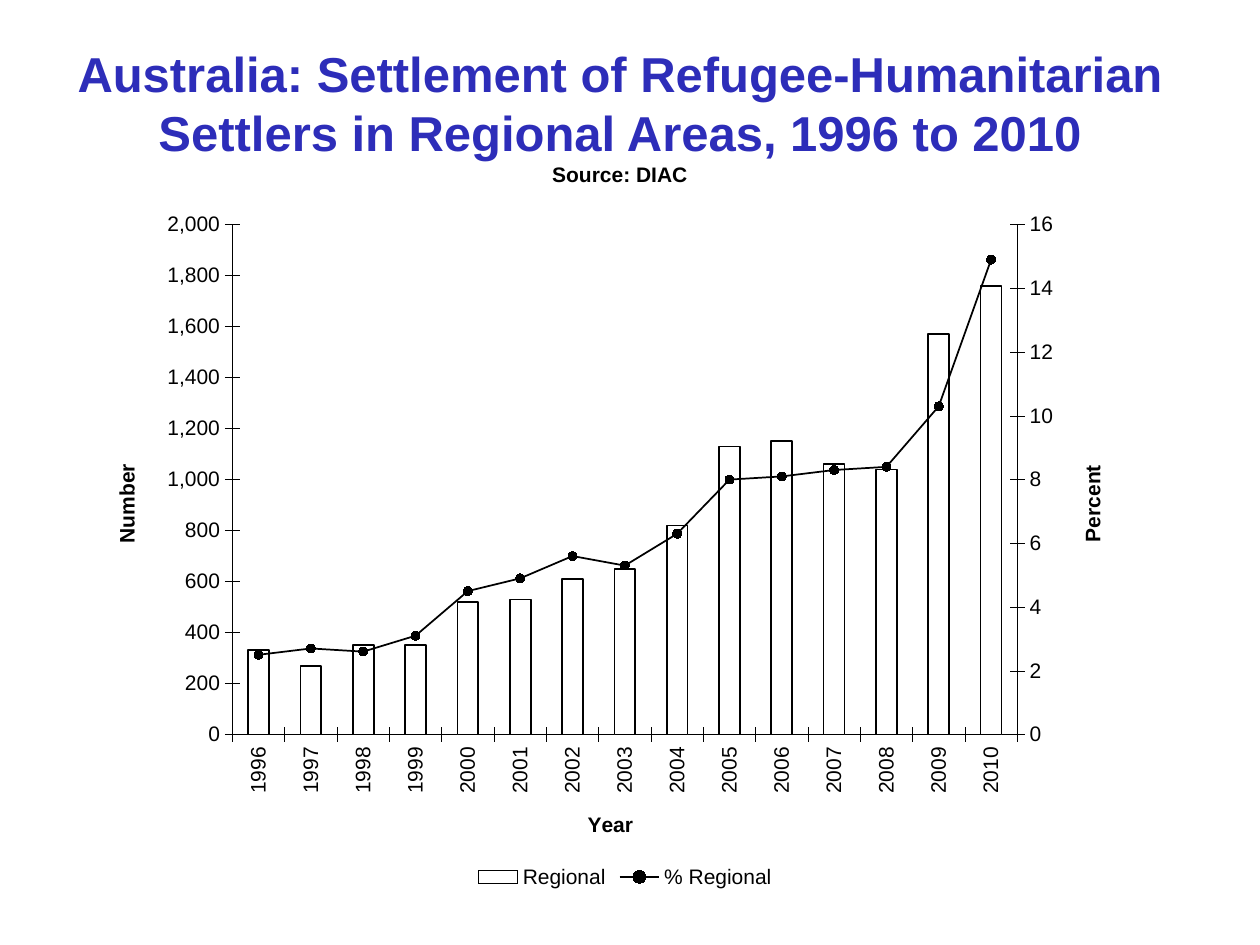
"""Build a slide with a column and line chart of regional settlement."""
from copy import deepcopy
from dataclasses import dataclass

from lxml import etree
from pptx import Presentation
from pptx import util as u
from pptx.chart import axis as ax
from pptx.chart import data as cd
from pptx.dml import color
from pptx.enum import chart as ch
from pptx.enum import text
from pptx.oxml import ns


@dataclass(frozen=True)
class Theme:
    font: str = "Arial"
    heading: color.RGBColor = color.RGBColor(0x2D, 0x2D, 0xB9)
    ink: color.RGBColor = color.RGBColor(0, 0, 0)
    paper: color.RGBColor = color.RGBColor(255, 255, 255)
    title_size: int = 28
    body_size: int = 12
    axis_line: float = 0.25
    series_line: float = 1


class SlideBuilder:
    def __init__(self, prs, theme):
        self.theme = theme
        self.s = prs.slides.add_slide(prs.slide_layouts[5])

    def style_font(self, font, size, rgb, bold=False):
        font.name, font.size, font.bold = self.theme.font, u.Pt(size), bold
        font.color.rgb = rgb

    def style_line(self, line, width):
        line.color.rgb, line.width = self.theme.ink, u.Pt(width)

    def style_fill(self, fill, rgb):
        fill.solid()
        fill.fore_color.rgb = rgb

    def title(self, lines, left, top, width, height):
        sp = self.s.shapes.title
        sp.left, sp.top, sp.width, sp.height = map(u.Pt, (left, top, width, height))
        tf = sp.text_frame
        tf.word_wrap, tf.auto_size = True, text.MSO_AUTO_SIZE.NONE
        tf.vertical_anchor = text.MSO_ANCHOR.MIDDLE
        tf.margin_bottom = u.Pt(18)
        for i, (words, size, rgb) in enumerate(lines):
            p = tf.add_paragraph() if i else tf.paragraphs[0]
            p.alignment = text.PP_ALIGN.CENTER
            r = p.add_run()
            r.text = words
            self.style_font(r.font, size, rgb, bold=True)

    def axis(self, axis, title, turn_title=False, turn_labels=False):
        t = self.theme
        axis.has_major_gridlines = False
        axis.major_tick_mark = ch.XL_TICK_MARK.CROSS
        axis.minor_tick_mark = ch.XL_TICK_MARK.NONE
        self.style_line(axis.format.line, t.axis_line)
        self.style_font(axis.tick_labels.font, t.body_size, t.ink)
        tf = axis.axis_title.text_frame
        p = tf.paragraphs[0]
        r = p.add_run()
        r.text = title
        self.style_font(r.font, t.body_size, t.ink, bold=True)
        turned = {"c:title//a:bodyPr": turn_title, "c:txPr/a:bodyPr": turn_labels}
        for query, turn in turned.items():
            for body in axis._element.xpath(query):
                body.set("rot", "-5400000" if turn else "0")
                body.set("vert", "horz")

    def scale(self, axis, top, step, number_format):
        axis.minimum_scale, axis.maximum_scale, axis.major_unit = 0, top, step
        labels = axis.tick_labels
        labels.number_format, labels.number_format_is_linked = number_format, False

    def plot_layout(self, chart, **box):
        area = chart._chartSpace.chart.plotArea
        for old in area.findall(ns.qn("c:layout")):
            area.remove(old)
        layout = etree.Element(ns.qn("c:layout"))
        manual = etree.SubElement(layout, ns.qn("c:manualLayout"))
        settings = dict(layoutTarget="inner", xMode="edge", yMode="edge", **box)
        for tag, val in settings.items():
            etree.SubElement(manual, ns.qn(f"c:{tag}"), val=str(val))
        area.insert(0, layout)

    def move_last_to_right_axis(self, chart, left_axis):
        """Turn the last column series into a line on a second value axis."""
        area = chart._chartSpace.chart.plotArea
        bar = area.find(ns.qn("c:barChart"))
        ser = bar.findall(ns.qn("c:ser"))[-1]
        for flag in ser.findall(ns.qn("c:invertIfNegative")):
            ser.remove(flag)
        line = bar.makeelement(ns.qn("c:lineChart"))
        bar.addnext(line)
        etree.SubElement(line, ns.qn("c:grouping"), val="standard")
        etree.SubElement(line, ns.qn("c:varyColors"), val="0")
        line.append(ser)
        etree.SubElement(line, ns.qn("c:marker"), val="1")
        cat_id, val_id = "50010", "50020"
        for axis_id in (cat_id, val_id):
            etree.SubElement(line, ns.qn("c:axId"), val=axis_id)
        cat = deepcopy(chart.category_axis._element)
        val = deepcopy(left_axis._element)
        left_axis._element.addnext(val)
        val.addnext(cat)
        for axis, own, other in ((cat, cat_id, val_id), (val, val_id, cat_id)):
            axis.find(ns.qn("c:axId")).set("val", own)
            axis.find(ns.qn("c:crossAx")).set("val", other)
        val.find(ns.qn("c:axPos")).set("val", "r")
        val.find(ns.qn("c:crosses")).set("val", "max")
        ax.CategoryAxis(cat).visible = False
        return ax.ValueAxis(val)

    def combo_chart(self, years, series, left, top, width, height):
        t = self.theme
        data = cd.CategoryChartData()
        data.categories = years
        for name, values in series.items():
            data.add_series(name, values)
        chart = self.s.shapes.add_chart(
            ch.XL_CHART_TYPE.COLUMN_CLUSTERED,
            *map(u.Pt, (left, top, width, height)), data).chart
        self.style_font(chart.font, t.body_size, t.ink)
        chart.has_title = False
        chart.has_legend = True
        chart.legend.position = ch.XL_LEGEND_POSITION.BOTTOM
        chart.legend.include_in_layout = False
        self.style_font(chart.legend.font, t.body_size, t.ink)

        number_axis = chart.value_axis
        percent_axis = self.move_last_to_right_axis(chart, number_axis)
        self.axis(chart.category_axis, "Year", turn_labels=True)
        self.axis(number_axis, "Number", turn_title=True)
        self.axis(percent_axis, "Percent", turn_title=True)
        self.scale(number_axis, 2000, 200, "#,##0")
        self.scale(percent_axis, 16, 2, "0")
        self.plot_layout(chart, x=0.15, y=0.03, w=0.7, h=0.74)

        columns, line = chart.plots
        columns.gap_width, columns.vary_by_categories = 150, False
        bars, trend = columns.series[0], line.series[0]
        self.style_fill(bars.format.fill, t.paper)
        trend.smooth = False
        trend.marker.style, trend.marker.size = ch.XL_MARKER_STYLE.CIRCLE, 5
        self.style_fill(trend.marker.format.fill, t.ink)
        for part in (bars, trend, trend.marker):
            self.style_line(part.format.line, t.series_line)


def main():
    prs = Presentation()
    prs.slide_width, prs.slide_height = u.Pt(720), u.Pt(540)
    theme = Theme()
    slide = SlideBuilder(prs, theme)
    slide.title([
        ("Australia: Settlement of Refugee-Humanitarian Settlers in Regional "
         "Areas, 1996 to 2010", theme.title_size, theme.heading),
        ("Source: DIAC", theme.body_size, theme.ink),
    ], 28.1, 28, 652.3, 90)
    slide.combo_chart([str(year) for year in range(1996, 2011)], {
        "Regional": (330, 270, 350, 350, 520, 530, 610, 650, 820, 1130, 1150,
                     1060, 1040, 1570, 1760),
        "% Regional": (2.5, 2.7, 2.6, 3.1, 4.5, 4.9, 5.6, 5.3, 6.3, 8, 8.1,
                       8.3, 8.4, 10.3, 14.9),
    }, 36.7, 116.6, 640.8, 393.8)
    prs.save("out.pptx")


if __name__ == "__main__":
    main()
